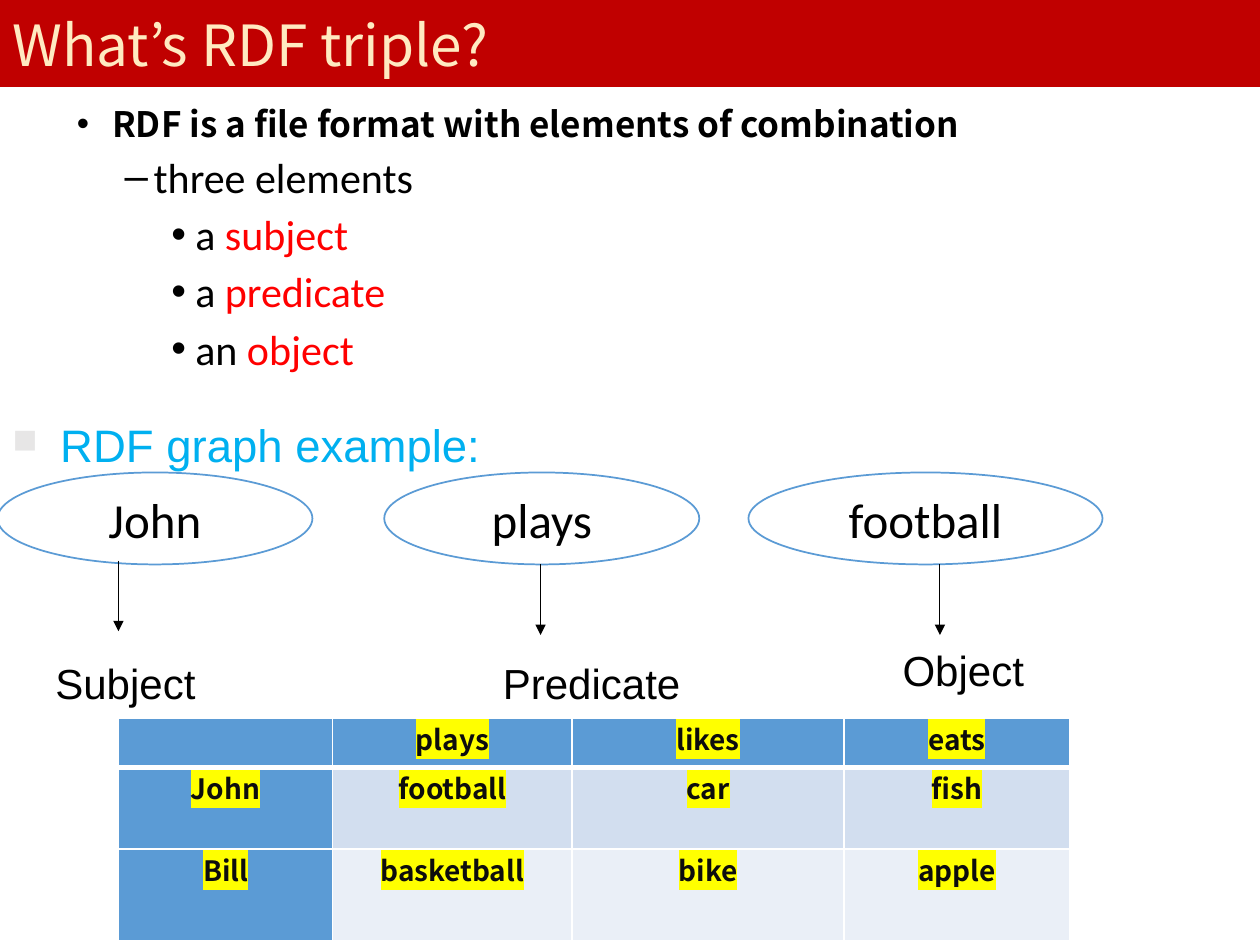
"""Build the slide that explains RDF triples."""
from dataclasses import dataclass

from pptx import Presentation
from pptx.dml.color import RGBColor
from pptx.enum.shapes import MSO_CONNECTOR, MSO_SHAPE
from pptx.enum.text import MSO_ANCHOR, MSO_AUTO_SIZE, PP_ALIGN
from pptx.oxml.xmlchemy import OxmlElement
from pptx.util import Inches, Pt


@dataclass(frozen=True)
class Theme:
    """Fonts, type sizes and colours."""
    heading_font: str = "Noto Sans CJK JP"
    body_font: str = "Calibri"
    label_font: str = "Arial"
    title_size: float = 32.4
    lead_size: float = 20
    body_size: float = 24
    example_size: float = 26
    node_size: float = 28
    cell_size: float = 16
    banner: str = "C00000"
    title: str = "FFEAC1"
    text: str = "000000"
    keyword: str = "FF0000"
    example: str = "00B0F0"
    bullet: str = "E7E6E6"
    blue: str = "5B9BD5"
    white: str = "FFFFFF"
    cell_text: str = "0D0D0D"
    highlight: str = "FFFF00"
    bands: tuple = ("D2DEEF", "EAEFF7")


THEME = Theme()
TITLE = "What’s RDF triple?"
POINTS = [
    (0, "RDF is a file format with elements of combination", ""),
    (1, "three elements", ""),
    (2, "a ", "subject"),
    (2, "a ", "predicate"),
    (2, "an ", "object"),
]
INDENTS = [(0.28, -0.28), (0.61, -0.23), (0.94, -0.19)]
EXAMPLE = "RDF graph example:"
NODE_TOP, NODE_HEIGHT = 3.75, 0.73
TRIPLE = [
    {"node": "John", "left": -0.02, "width": 2.5, "arrow": (0.94, 4.45),
     "role": "Subject", "role_box": (0.14, 5.17, 1.71, 0.5)},
    {"node": "plays", "left": 3.05, "width": 2.5, "arrow": (4.29, 4.48),
     "role": "Predicate", "role_box": (3.84, 5.17, 1.71, 0.5)},
    {"node": "football", "left": 5.94, "width": 2.81, "arrow": (7.46, 4.48),
     "role": "Object", "role_box": (6.94, 5.07, 1.41, 0.5)},
]
ARROW_LENGTH = 0.56
FACTS = [
    ["", "plays", "likes", "eats"],
    ["John", "football", "car", "fish"],
    ["Bill", "basketball", "bike", "apple"],
]
COLUMN_WIDTHS = [1.7, 1.9, 2.16, 1.79]
ROW_HEIGHTS = [0.39, 0.65, 0.73]


def rgb(value):
    return RGBColor.from_string(value)


def place(shape, left, top, width, height):
    shape.left, shape.top = Inches(left), Inches(top)
    shape.width, shape.height = Inches(width), Inches(height)


def element(parent, tag, **attributes):
    child = OxmlElement(tag)
    for name, value in attributes.items():
        child.set(name, str(value))
    parent.append(child)
    return child


def style(run, font, size, color, bold=False):
    run.font.name, run.font.size, run.font.bold = font, Pt(size), bold
    run.font.color.rgb = rgb(color)


def indent(paragraph, margin, first):
    properties = paragraph._p.get_or_add_pPr()
    properties.set("marL", str(Inches(margin)))
    properties.set("indent", str(Inches(first)))
    return properties


def add_title(slide):
    title = slide.shapes.title
    place(title, 0, 0, 10, 0.69)
    title.fill.solid()
    title.fill.fore_color.rgb = rgb(THEME.banner)
    frame = title.text_frame
    frame.text = TITLE
    frame.auto_size = MSO_AUTO_SIZE.NONE
    frame.vertical_anchor = MSO_ANCHOR.MIDDLE
    frame.paragraphs[0].alignment = PP_ALIGN.LEFT
    style(frame.paragraphs[0].runs[0], THEME.heading_font, THEME.title_size, THEME.title)


def add_points(slide):
    body = slide.placeholders[1]
    place(body, 0.51, 0.76, 8.98, 2.3)
    frame = body.text_frame
    frame.text = "\n".join(lead for _, lead, _ in POINTS)
    frame.auto_size = MSO_AUTO_SIZE.NONE
    for paragraph, (level, _, keyword) in zip(frame.paragraphs, POINTS):
        paragraph.level = level
        paragraph.space_before = Pt(4)
        indent(paragraph, *INDENTS[level])
        if level:
            style(paragraph.runs[0], THEME.body_font, THEME.body_size, THEME.text)
        else:
            style(paragraph.runs[0], THEME.heading_font, THEME.lead_size, THEME.text, True)
        if keyword:
            run = paragraph.add_run()
            run.text = keyword
            style(run, THEME.body_font, THEME.body_size, THEME.keyword)


def add_label(slide, text, box, size, color):
    label = slide.shapes.add_textbox(*map(Inches, box))
    label.text_frame.word_wrap = True
    label.text_frame.text = text
    paragraph = label.text_frame.paragraphs[0]
    paragraph.space_before = Pt(size * 0.2)
    style(paragraph.runs[0], THEME.label_font, size, color)
    return paragraph


def add_example_heading(slide):
    heading = add_label(slide, EXAMPLE, (0, 3.31, 10, 0.5), THEME.example_size, THEME.example)
    heading.line_spacing = 0.9
    properties = indent(heading, 0.38, -0.38)
    element(element(properties, "a:buClr"), "a:srgbClr", val=THEME.bullet)
    element(properties, "a:buSzPct", val=75000)
    element(properties, "a:buChar", char="■")


def add_triple_part(slide, part):
    node = slide.shapes.add_shape(
        MSO_SHAPE.OVAL, *map(Inches, (part["left"], NODE_TOP, part["width"], NODE_HEIGHT)))
    node.shadow.inherit = False
    node.fill.solid()
    node.fill.fore_color.rgb = rgb(THEME.white)
    node.line.color.rgb = rgb(THEME.blue)
    node.line.width = Pt(1)
    node.text_frame.text = part["node"]
    node.text_frame.vertical_anchor = MSO_ANCHOR.MIDDLE
    node.text_frame.paragraphs[0].alignment = PP_ALIGN.CENTER
    style(node.text_frame.paragraphs[0].runs[0], THEME.body_font, THEME.node_size, THEME.text)

    x, top = part["arrow"]
    arrow = slide.shapes.add_connector(
        MSO_CONNECTOR.STRAIGHT, *map(Inches, (x, top, x, top + ARROW_LENGTH)))
    arrow.line.color.rgb = rgb(THEME.text)
    arrow.line.width = Pt(0.5)
    element(arrow.line._get_or_add_ln(), "a:tailEnd", type="triangle")
    element(arrow._element.spPr, "a:effectLst")

    role = add_label(slide, part["role"], part["role_box"], THEME.body_size, THEME.text)
    role.alignment = PP_ALIGN.CENTER


def set_borders(cell, widths):
    properties = cell._tc.get_or_add_tcPr()
    for position, (side, width) in enumerate(widths.items()):
        line = element(properties, f"a:ln{side}", w=Pt(width))
        element(element(line, "a:solidFill"), "a:srgbClr", val=THEME.white)
        properties.insert(position, line)


def add_facts(slide):
    table = slide.shapes.add_table(
        len(FACTS), len(FACTS[0]), Inches(0.94), Inches(5.7),
        Inches(sum(COLUMN_WIDTHS)), Inches(sum(ROW_HEIGHTS))).table
    for column, width in zip(table.columns, COLUMN_WIDTHS):
        column.width = Inches(width)
    for r, (row, height) in enumerate(zip(FACTS, ROW_HEIGHTS)):
        table.rows[r].height = Inches(height)
        for c, fact in enumerate(row):
            cell = table.cell(r, c)
            cell.margin_left = cell.margin_right = Inches(0.07)
            cell.margin_top = cell.margin_bottom = 0
            cell.fill.solid()
            cell.fill.fore_color.rgb = rgb(THEME.bands[r - 1] if r and c else THEME.blue)
            set_borders(cell, {"L": 1, "R": 1, "T": 3 if r == 1 else 1, "B": 1 if r else 3})
            cell.text_frame.text = fact
            paragraph = cell.text_frame.paragraphs[0]
            paragraph.alignment = PP_ALIGN.CENTER
            for run in paragraph.runs:
                style(run, THEME.heading_font, THEME.cell_size, THEME.cell_text, True)
                highlight = element(run.font._element, "a:highlight")
                element(highlight, "a:srgbClr", val=THEME.highlight)
                run.font._element.insert(1, highlight)


def main():
    deck = Presentation()
    deck.slide_width, deck.slide_height = Inches(10), Inches(7.5)
    slide = deck.slides.add_slide(deck.slide_layouts[1])
    add_title(slide)
    add_points(slide)
    for part in TRIPLE:
        add_triple_part(slide, part)
    add_example_heading(slide)
    add_facts(slide)
    deck.save("out.pptx")


if __name__ == "__main__":
    main()
